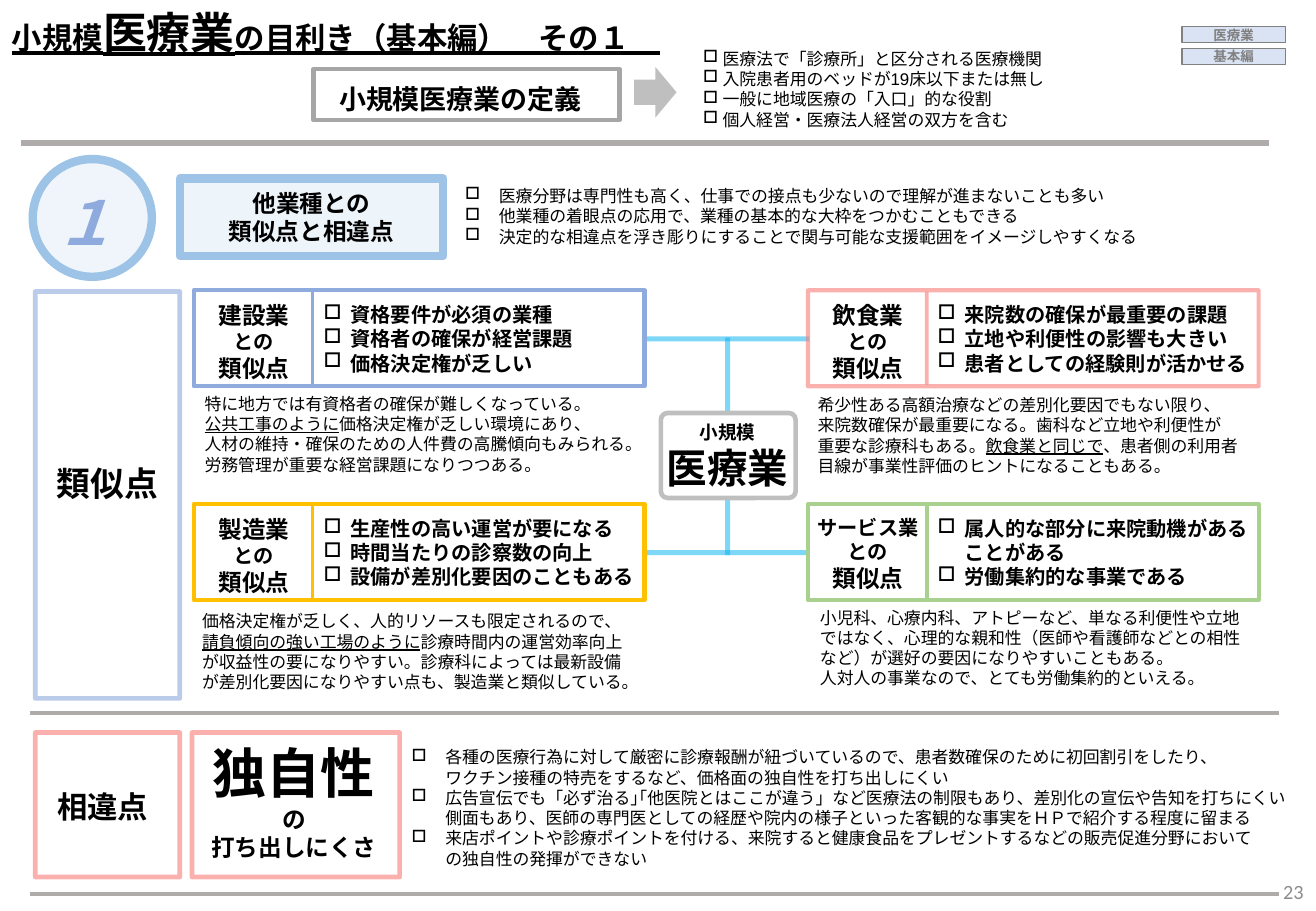
import pptx
import pptx.dml.color
import pptx.enum.lang
import pptx.enum.shapes
import pptx.enum.text
import pptx.oxml
import pptx.oxml.ns
import pptx.util

Pt = pptx.util.Pt
SHAPE = pptx.enum.shapes.MSO_SHAPE
ALIGN = pptx.enum.text.PP_ALIGN
MIDDLE = pptx.enum.text.MSO_ANCHOR.MIDDLE
GROW = pptx.enum.text.MSO_AUTO_SIZE.SHAPE_TO_FIT_TEXT
FIXED = pptx.enum.text.MSO_AUTO_SIZE.NONE
BODY = {"name": "Calibri", "size": Pt(10), "bold": False,
        "language_id": pptx.enum.lang.MSO_LANGUAGE_ID.JAPANESE}
STRONG = {"bold": True}
UNDERLINED = {"underline": True}
BLUE, PINK, GREY, RULE = "8FAADC", "F87E78", "BFBFBF", "AFABAB"


def child(parent, tag, **attributes):
    element = pptx.oxml.parse_xml(f"<a:{tag} {pptx.oxml.ns.nsdecls('a')}/>")
    for key, value in attributes.items():
        element.set(key, value)
    parent.append(element)


def paint(fill, colour, opacity=100):
    if colour is None:
        fill.background()
        return
    fill.solid()
    fill.fore_color.rgb = pptx.dml.color.RGBColor.from_string(colour)
    if opacity < 100:
        child(fill._xPr.find(".//" + pptx.oxml.ns.qn("a:srgbClr")), "alpha", val=str(opacity * 1000))


def apply(target, values):
    for key, value in values.items():
        setattr(target, key, value)


def size(points):
    return {"size": Pt(points)}


def write(frame, paragraphs, style, colour="000000", align=ALIGN.LEFT, **layout):
    apply(frame, {"word_wrap": True, "auto_size": GROW, **layout})
    for index, runs in enumerate(paragraphs):
        paragraph = frame.add_paragraph() if index else frame.paragraphs[0]
        paragraph.alignment = align
        for wording, changes in runs:
            run = paragraph.add_run()
            run.text = wording
            apply(run.font, BODY | style | changes)
            child(run._r.get_or_add_rPr(), "ea", typeface="Calibri")
            paint(run.font.fill, colour)


def plain(*lines):
    return [[(line, {})] for line in lines]


def label(slide, box, paragraphs, style=STRONG, align=ALIGN.CENTER, **options):
    frame = slide.shapes.add_textbox(*map(Pt, box)).text_frame
    write(frame, paragraphs, style, align=align, **options)
    return frame


def checklist(slide, box, points, style, hang):
    lines = [line for point in points for line in point]
    frame = label(slide, box, plain(*lines), style, ALIGN.LEFT)
    starts = [line is point[0] for point in points for line in point]
    for paragraph, is_start in zip(frame.paragraphs, starts):
        properties = paragraph._p.get_or_add_pPr()
        properties.set("marL", str(Pt(hang)))
        if is_start:
            properties.set("indent", str(-Pt(hang)))
            child(properties, "buChar", char="□")


def panel(slide, box, kind=SHAPE.RECTANGLE, fill=None, fill_opacity=100,
          line=None, width=2.75, line_opacity=100):
    shape = slide.shapes.add_shape(kind, *map(Pt, box))
    shape.shadow.inherit = False
    paint(shape.fill, fill, fill_opacity)
    paint(shape.line.fill, line, line_opacity)
    if line:
        shape.line.width = Pt(width)
    return shape


def stroke(slide, start, end, colour, width=2.25, opacity=100):
    connector = slide.shapes.add_connector(
        pptx.enum.shapes.MSO_CONNECTOR.STRAIGHT, *map(Pt, (*start, *end)))
    connector.line.width = Pt(width)
    paint(connector.line.fill, colour, opacity)
    child(connector._element.spPr, "effectLst")


def rules(slide, box):
    x, y, w, h = box
    for dx, dy in ((0, 0), (0, 1.4), (5.8, 338.4), (5.8, h)):
        stroke(slide, (x + dx, y + dy), (x + dx + w, y + dy), RULE)


def header(slide, box):
    x, y, w, h = box
    label(slide, (x, y, 507.6, 38.9), [[
        ("小規模", {}), ("医療業", size(26)), ("の目利き（基本編）　その１", {}),
        ("　", {"name": "Noto Sans CJK JP", "bold": False})]],
        STRONG | UNDERLINED | size(18) | {"name": "Arial"}, ALIGN.LEFT)
    label(slide, (x + 148.3, y + 45.4, 249.1, 26.6), plain("小規模医療業の定義"), STRONG | size(16))
    panel(slide, (x + 185.8, y + 41, 181.4, 30.2), line="A6A6A6")
    panel(slide, (x + 375.8, y + 39.6, 25.2, 30.2), SHAPE.RIGHT_ARROW, GREY)
    checklist(slide, (x + 409.7, y + 25.2, 245.5, 55.4), [
        ["医療法で「診療所」と区分される医療機関"], ["入院患者用のベッドが19床以下または無し"],
        ["一般に地域医療の「入口」的な役割"], ["個人経営・医療法人経営の双方を含む"]],
        {"name": "Arial"}, 11.5)
    for row, tag in enumerate(("医療業", "基本編")):
        badge = panel(slide, (x + 700.6, y + 15.9 + row * 12.9, 61.2, 9.4),
                      fill="DAE3F3", line="808080", width=0.75)
        write(badge.text_frame, plain(tag), STRONG | size(8), "808080", ALIGN.CENTER,
              vertical_anchor=MIDDLE, margin_left=0, margin_right=0, margin_top=0, margin_bottom=0)


def theme(slide, box):
    x, y, w, h = box
    panel(slide, (x, y, 70.6, h), SHAPE.OVAL, "BDD7EE", 23, "9DC3E6", 5)
    label(slide, (x + 5.8, y + 11.5, 85.7, 51.1), plain("１"),
          STRONG | size(36) | {"italic": True, "name": "Arial"}, ALIGN.LEFT, colour=BLUE)
    heading = panel(slide, (x + 87.2, y + 11.5, 156.2, 46.1), SHAPE.RECTANGLE, "BDD7EE", 26, "9DC3E6", 5)
    write(heading.text_frame, plain("他業種との", "類似点と相違点"), STRONG | size(14),
          align=ALIGN.CENTER, vertical_anchor=MIDDLE, auto_size=FIXED)
    checklist(slide, (x + 249.2, y + 12.2, 483.1, 43.9), [
        ["医療分野は専門性も高く、仕事での接点も少ないので理解が進まないことも多い"],
        ["他業種の着眼点の応用で、業種の基本的な大枠をつかむこともできる"],
        ["決定的な相違点を浮き彫りにすることで関与可能な支援範囲をイメージしやすくなる"]], {}, 20)


def industry_card(slide, box, industry, industry_size, colour, opacity, points, note, note_shift):
    x, y, w, h = box
    checklist(slide, (x + 69.8, y + 3.6, 219.6, 51.1), points, STRONG | size(12), 16)
    label(slide, (x - 22.7, y + 2.9, 116.6, 55.4),
          [[(industry, size(industry_size))], [("との", size(12))], [("類似点", size(14))]])
    panel(slide, box, line=colour, width=2.5, line_opacity=opacity)
    stroke(slide, (x + 70.4, y + 1), (x + 70.4, y + h - 1), colour, opacity=opacity)
    dx, dy = note_shift
    label(slide, (x + dx, y + dy, 270, 55.4), note, {}, ALIGN.LEFT)


CARDS = [
    ("建設業", 14, BLUE, 100, [["資格要件が必須の業種"], ["資格者の確保が経営課題"], ["価格決定権が乏しい"]],
     [[("特に地方では有資格者の確保が難しくなっている。", {})],
      [("公共工事のように", UNDERLINED), ("価格決定権が乏しい環境にあり、", {})],
      [("人材の維持・確保のための人件費の高騰傾向もみられる。", {})],
      [("労務管理が重要な経営課題になりつつある。", {})]], (-0.7, 57.6)),
    ("飲食業", 14, PINK, 60,
     [["来院数の確保が最重要の課題"], ["立地や利便性の影響も大きい"], ["患者としての経験則が活かせる"]],
     [[("希少性ある高額治療などの差別化要因でもない限り、", {})],
      [("来院数確保が最重要になる。歯科など立地や利便性が", {})],
      [("重要な診療科もある。", {}), ("飲食業と同じで", UNDERLINED),
       ("、患者側の利用者目線が事業性評価のヒントになることもある。", {})]], (-1.4, 58.3)),
    ("製造業", 14, "FFC000", 100,
     [["生産性の高い運営が要になる"], ["時間当たりの診察数の向上"], ["設備が差別化要因のこともある"]],
     [[("価格決定権が乏しく、人的リソースも限定されるので、", {}), ("請負傾向の強い工場のように", UNDERLINED),
       ("診療時間内の運営効率向上が収益性の要になりやすい。診療科によっては最新設備が"
        "差別化要因になりやすい点も、製造業と類似している。", {})]], (-2.2, 59.8)),
    ("サービス業", 12, "A9D18E", 100,
     [["属人的な部分に来院動機がある", "ことがある"], ["労働集約的な事業である"]],
     plain("小児科、心療内科、アトピーなど、単なる利便性や立地ではなく、心理的な親和性"
           "（医師や看護師などとの相性など）が選好の要因になりやすいこともある。",
           "人対人の事業なので、とても労働集約的といえる。"), (0, 57.6))]


def similarities(slide, box):
    x, y, w, h = box
    for start, end in (((362.4, 28.1), (458.8, 28.1)), ((362.4, 154.8), (458.8, 154.8)),
                       ((410.4, 27.4), (410.4, 156.2))):
        stroke(slide, (x + start[0], y + start[1]), (x + end[0], y + end[1]), "00B0F0", 3, 50)
    label(slide, (x - 15.1, y + 97.9, 115.9, 31.7), plain("類似点"), STRONG | size(20))
    panel(slide, (x, y, 85.7, h), line=BLUE, line_opacity=60)
    for index, card in enumerate(CARDS):
        row, column = divmod(index, 2)
        industry_card(slide, (x + 94 + column * 364, y - 0.7 + row * 126.7, 267.1, 56.9), *card)
    hub = panel(slide, (x + 365.8, y + 72.7, 89.3, 49.7), fill="FFFFFF")
    write(hub.text_frame, [[("小規模", size(11))], [("医療業", size(24))]], STRONG, align=ALIGN.CENTER)
    panel(slide, (x + 370.8, y + 72, 79.9, 50.4), SHAPE.ROUNDED_RECTANGLE, line=GREY).adjustments[0] = 0.08


def differences(slide, box):
    x, y, w, h = box
    label(slide, (x - 18, y + 29.5, 115.9, 28.8), plain("相違点"), STRONG | size(18))
    for dx, width in ((0, 85.7), (92.9, 123.1)):
        panel(slide, (x + dx, y, width, h), line=PINK, line_opacity=60)
    label(slide, (x + 43.9, y + 0.7, 218.9, 79.9),
          [[("独自性", size(32) | {"name": "Noto Sans CJK JP"})], *plain("の", "打ち出しにくさ")],
          STRONG | size(14))
    checklist(slide, (x + 216, y + 5, 540.7, 79.9), [
        ["各種の医療行為に対して厳密に診療報酬が紐づいているので、患者数確保のために初回割引をしたり、",
         "ワクチン接種の特売をするなど、価格面の独自性を打ち出しにくい"],
        ["広告宣伝でも「必ず治る｣｢他医院とはここが違う」など医療法の制限もあり、差別化の宣伝や告知を打ちにくい",
         "側面もあり、医師の専門医としての経歴や院内の様子といった客観的な事実をＨＰで紹介する程度に留まる"],
        ["来店ポイントや診療ポイントを付ける、来院すると健康食品をプレゼントするなどの販売促進分野において",
         "の独自性の発揮ができない"]], {}, 20)


def main():
    deck = pptx.Presentation()
    apply(deck, {"slide_width": Pt(780), "slide_height": Pt(540)})
    slide = deck.slides.add_slide(deck.slide_layouts[6])
    rules(slide, (12.2, 84.2, 740.2, 445.7))
    header(slide, (0, 0, 780, 84))
    theme(slide, (19.4, 94.3, 732, 69.8))
    similarities(slide, (20.9, 172.8, 725, 241.2))
    differences(slide, (20.9, 434.2, 757, 85.7))
    label(slide, (741.6, 517, 38.2, 23), plain("23"), size(12), ALIGN.RIGHT,
          colour="8C8C8C", vertical_anchor=MIDDLE, auto_size=FIXED)
    deck.save("out.pptx")


if __name__ == "__main__":
    main()
